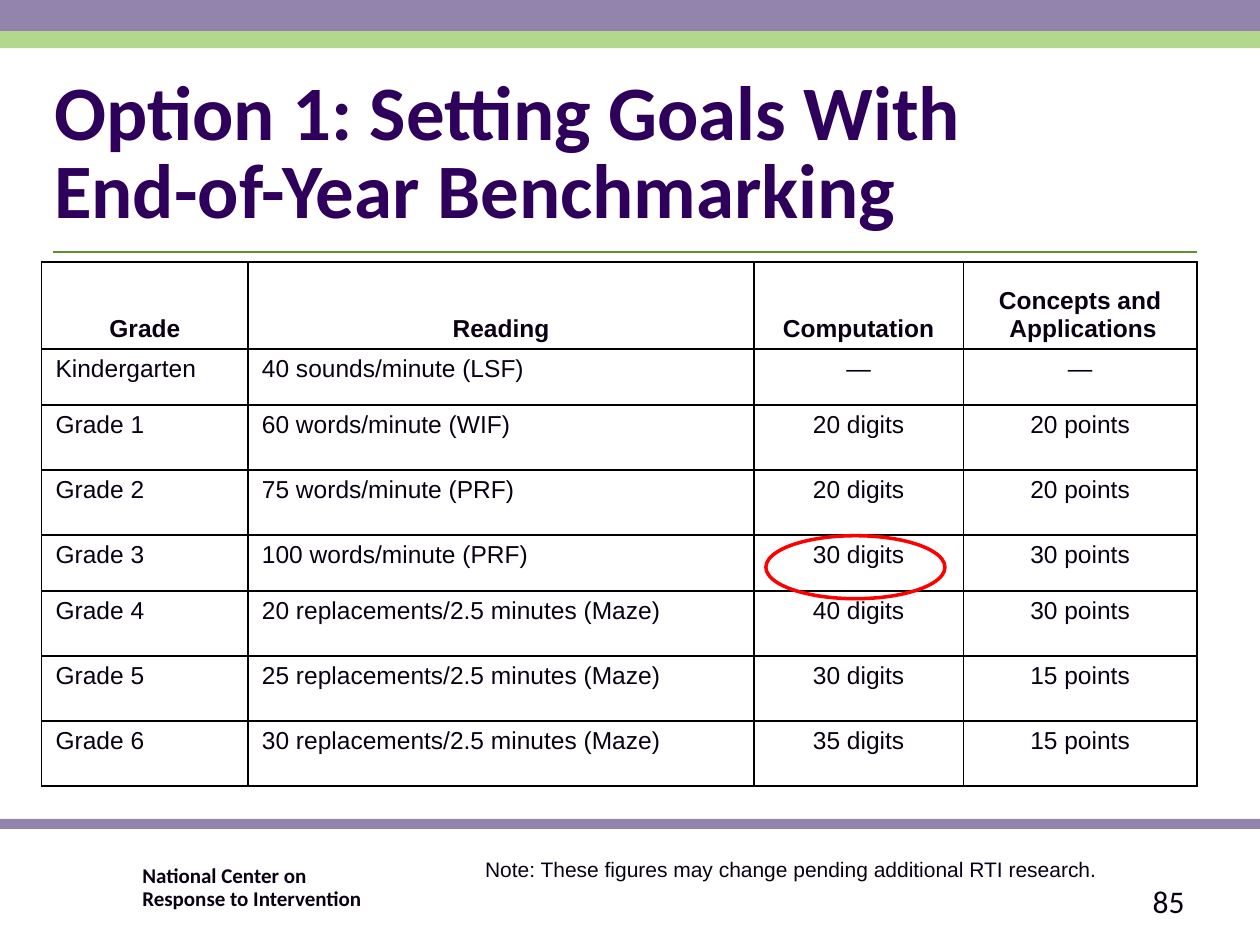
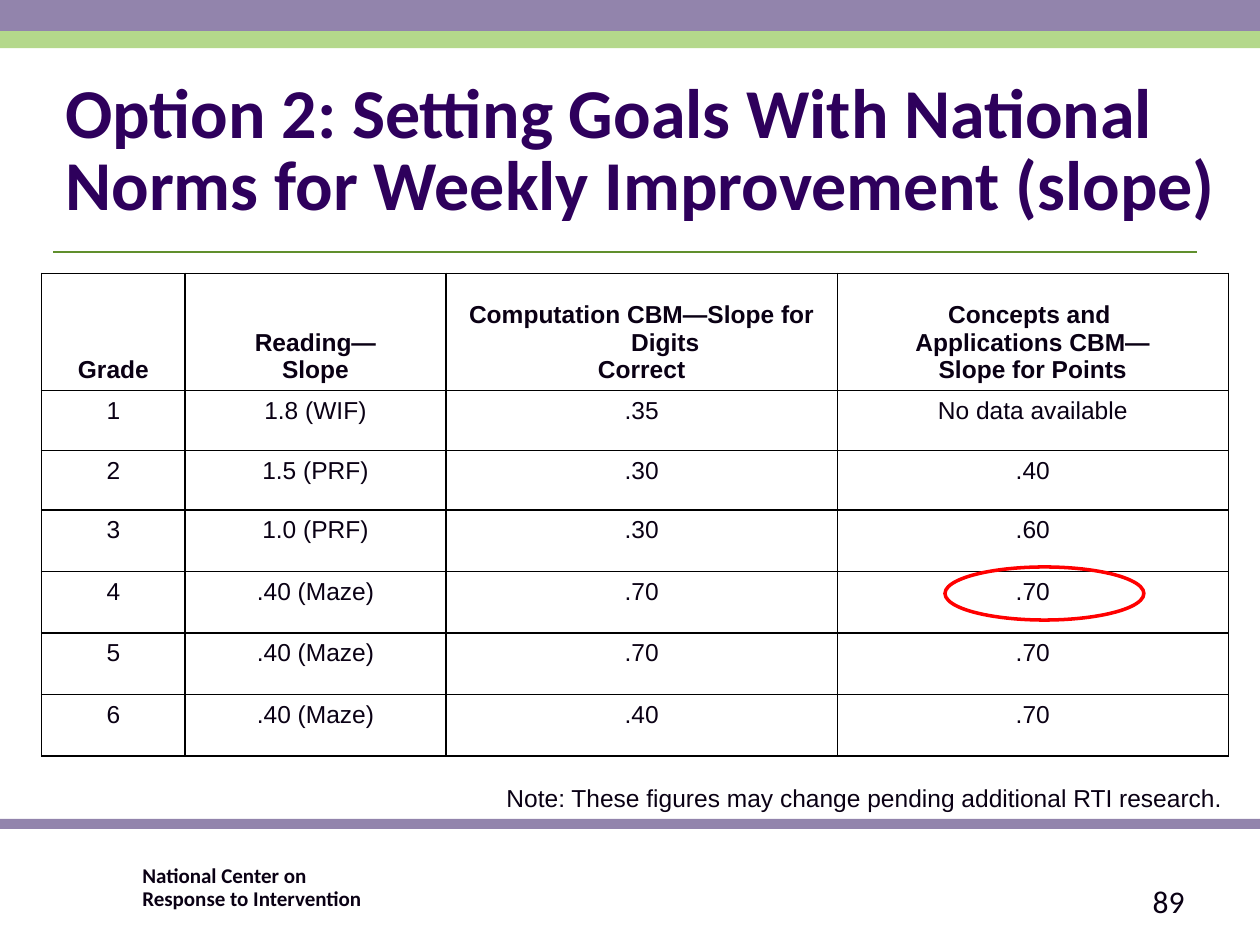
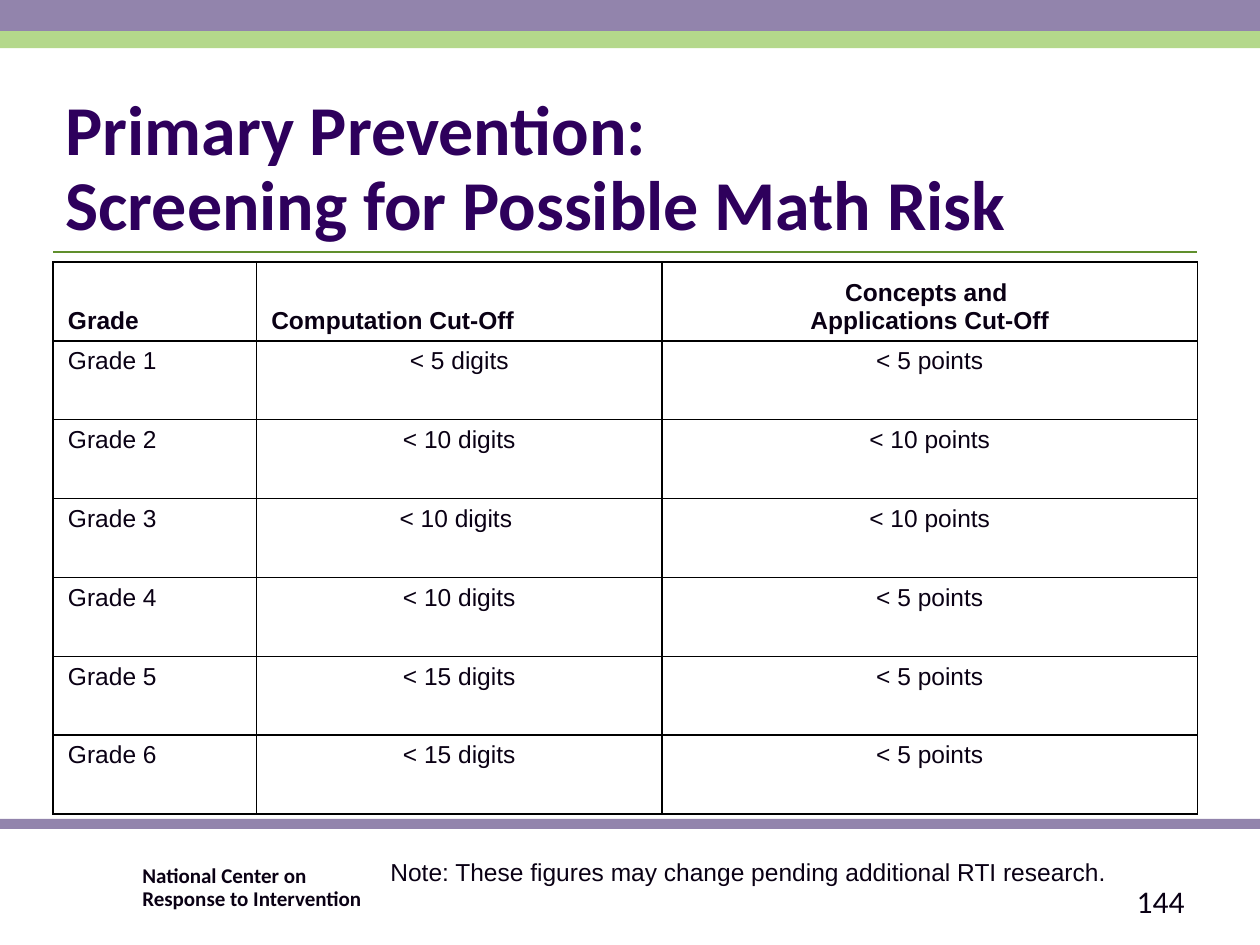
from lxml import etree
from pptx import Presentation, util as u
from pptx.dml import color
from pptx.enum import shapes, text
from pptx.oxml import ns

PURPLE = color.RGBColor(0x92, 0x84, 0xAC)
GREEN = color.RGBColor(0xB4, 0xD8, 0x8B)
RULE_GREEN = color.RGBColor(0x60, 0x8F, 0x2D)
TITLE_PURPLE = color.RGBColor(0x2E, 0x00, 0x5C)
INK = color.RGBColor(0x0A, 0x00, 0x14)
RED = color.RGBColor(0xFF, 0x00, 0x00)
WHITE = color.RGBColor(0xFF, 0xFF, 0xFF)
BLACK = color.RGBColor(0x00, 0x00, 0x00)

LEFT, CENTER, RIGHT = text.PP_ALIGN.LEFT, text.PP_ALIGN.CENTER, text.PP_ALIGN.RIGHT
TOP, MIDDLE, BOTTOM = text.MSO_ANCHOR.TOP, text.MSO_ANCHOR.MIDDLE, text.MSO_ANCHOR.BOTTOM

BANDS = [(16.51, 0.2, PURPLE), (0, 0.63, PURPLE), (0.63, 0.34, GREEN)]
FOOTER = "National Center on \vResponse to Intervention"
NOTE = "Note: These figures may change pending additional RTI research."
HANGING_INDENT = u.Cm(0.95)

BENCHMARKS = [
    ["Grade", "Reading", "Computation", "Concepts and\n Applications"],
    ["Kindergarten", "40 sounds/minute (LSF)", "—", "—"],
    ["Grade 1", "60 words/minute (WIF)", "20 digits", "20 points"],
    ["Grade 2", "75 words/minute (PRF)", "20 digits", "20 points"],
    ["Grade 3", "100 words/minute (PRF)", "30 digits", "30 points"],
    ["Grade 4", "20 replacements/2.5 minutes (Maze)", "40 digits", "30 points"],
    ["Grade 5", "25 replacements/2.5 minutes (Maze)", "30 digits", "15 points"],
    ["Grade 6", "30 replacements/2.5 minutes (Maze)", "35 digits", "15 points"],
]
SLOPES = [
    ["Grade", "Reading—\nSlope", "Computation CBM—Slope for Digits\nCorrect",
     "Concepts and \nApplications CBM—\nSlope for Points"],
    ["1", "1.8 (WIF)", ".35", "No data available"],
    ["2", "1.5 (PRF)", ".30", ".40"],
    ["3", "1.0 (PRF)", ".30", ".60"],
    ["4", ".40 (Maze)", ".70", ".70"],
    ["5", ".40 (Maze)", ".70", ".70"],
    ["6", ".40 (Maze)", ".40", ".70"],
]
CUT_OFFS = [
    ["Grade", "Computation Cut-Off", "Concepts and \vApplications Cut-Off"],
    ["Grade 1", "< 5 digits", "< 5 points"],
    ["Grade 2", "< 10 digits", "< 10 points"],
    ["Grade 3", "< 10 digits ", "< 10 points"],
    ["Grade 4", "< 10 digits", "< 5 points"],
    ["Grade 5", "< 15 digits", "< 5 points"],
    ["Grade 6", "< 15 digits", "< 5 points"],
]


def set_values(target, values):
    """Set attributes of an object from a dict."""
    for name, value in values.items():
        setattr(target, name, value)


def write(frame, words, size, font="Arial", bold=False, ink=INK, **paragraph_values):
    """Fill a text frame and format its paragraphs, runs and line breaks."""
    frame.text = words
    for paragraph in frame.paragraphs:
        set_values(paragraph, paragraph_values)
        for run in paragraph.runs:
            set_values(run.font, {"name": font, "size": u.Pt(size), "bold": bold})
            run.font.color.rgb = ink
        for line_break in paragraph._p.findall(ns.qn("a:br")):
            etree.SubElement(line_break, ns.qn("a:rPr")).set("sz", str(size * 100))


def add_text(slide, box, words, size, anchor=TOP, margin=None, **style):
    """Add a wrapping text box."""
    frame = slide.shapes.add_textbox(*map(u.Cm, box)).text_frame
    set_values(frame, {"word_wrap": True, "vertical_anchor": anchor})
    if margin is not None:
        sides = ("margin_left", "margin_top", "margin_right", "margin_bottom")
        set_values(frame, dict.fromkeys(sides, u.Cm(margin)))
    write(frame, words, size, **style)


def add_band(slide, top, height, fill):
    """Add a full-width coloured band."""
    band = slide.shapes.add_shape(
        shapes.MSO_SHAPE.RECTANGLE, 0, u.Cm(top), u.Cm(25.4), u.Cm(height))
    band.shadow.inherit = False
    band.fill.solid()
    band.fill.fore_color.rgb = fill
    band.line.fill.background()


def add_title_rule(slide):
    """Add the thin line under the title."""
    rule = slide.shapes.add_connector(
        shapes.MSO_CONNECTOR.STRAIGHT, u.Cm(1.07), u.Cm(5.08), u.Cm(24.13), u.Cm(5.08))
    rule.line.color.rgb = RULE_GREEN
    rule.line.width = u.Pt(0.75)
    etree.SubElement(rule._element.spPr, ns.qn("a:effectLst"))


def add_highlight(slide, box):
    """Add a red ring around a table value."""
    ring = slide.shapes.add_shape(shapes.MSO_SHAPE.OVAL, *map(u.Cm, box))
    ring.shadow.inherit = False
    ring.fill.background()
    ring.line.color.rgb = RED
    ring.line.width = u.Pt(2)


def add_borders(cell):
    """Draw a thin black line on every side of a cell."""
    properties = cell._tc.get_or_add_tcPr()
    for side in ("lnL", "lnR", "lnT", "lnB"):
        line = etree.SubElement(properties, ns.qn(f"a:{side}"), w=str(u.Pt(1)))
        fill = etree.SubElement(line, ns.qn("a:solidFill"))
        etree.SubElement(fill, ns.qn("a:srgbClr"), val=str(BLACK))


def format_cell(cell, words, header, align, side_margin, hanging):
    """Write one table cell with its borders, fill and margins."""
    add_borders(cell)
    cell.fill.solid()
    cell.fill.fore_color.rgb = WHITE
    set_values(cell, {
        "vertical_anchor": BOTTOM if header else TOP,
        "margin_left": u.Cm(side_margin), "margin_right": u.Cm(side_margin),
        "margin_top": u.Cm(0.13), "margin_bottom": u.Cm(0.13)})
    write(cell.text_frame, words, 14, bold=header, alignment=align)
    if hanging:
        for paragraph in cell.text_frame.paragraphs:
            properties = paragraph._p.get_or_add_pPr()
            properties.set("marL", str(HANGING_INDENT))
            properties.set("indent", str(-HANGING_INDENT))


def add_grid(slide, left, top, widths, heights, rows, header_aligns, body_aligns,
             side_margin=0.28, hanging=True):
    """Add a bordered table whose first row is the header."""
    table = slide.shapes.add_table(
        len(rows), len(widths), u.Cm(left), u.Cm(top),
        u.Cm(sum(widths)), u.Cm(sum(heights))).table
    set_values(table, {"first_row": False, "horz_banding": False})
    for column, width in zip(table.columns, widths):
        column.width = u.Cm(width)
    for row, height in zip(table.rows, heights):
        row.height = u.Cm(height)
    for r, row in enumerate(rows):
        aligns = body_aligns if r else header_aligns
        for c, (words, align) in enumerate(zip(row, aligns)):
            format_cell(table.cell(r, c), words, r == 0, align, side_margin, hanging)


def add_base_slide(presentation, title, title_box, title_size, number, spacing=0.85):
    """Add a slide with bands, footer, title and slide number."""
    slide = presentation.slides.add_slide(presentation.slide_layouts[6])
    for band in BANDS:
        add_band(slide, *band)
    add_text(slide, (2.77, 17.35, 8.23, 0.76), FOOTER, 12, margin=0.1,
             font="Calibri", bold=True, line_spacing=0.9)
    add_title_rule(slide)
    add_text(slide, title_box, title, title_size, anchor=BOTTOM, font="Calibri",
             bold=True, ink=TITLE_PURPLE, line_spacing=spacing)
    add_text(slide, (18.21, 17.65, 5.92, 1.02), number, 18, anchor=MIDDLE,
             font="Calibri", alignment=RIGHT)
    return slide


def main():
    """Build the three goal and screening slides."""
    presentation = Presentation()
    set_values(presentation, {"slide_width": u.Cm(25.4), "slide_height": u.Cm(19.05)})

    slide = add_base_slide(
        presentation, "Option 1: Setting Goals With \vEnd-of-Year Benchmarking",
        (0.84, 2.11, 23.29, 2.74), 44, "85")
    add_grid(slide, 0.84, 5.28, [4.16, 10.2, 4.22, 4.71],
             [1.76, 1.13, 1.31, 1.31, 1.13, 1.31, 1.31, 1.31], BENCHMARKS,
             [CENTER] * 4, [LEFT, LEFT, CENTER, CENTER])
    add_text(slide, (9.53, 17.15, 13.97, 0.76), NOTE, 12)
    add_highlight(slide, (15.44, 10.8, 3.61, 1.27))

    slide = add_base_slide(
        presentation,
        "Option 2: Setting Goals With National Norms for Weekly Improvement (slope)",
        (1.07, 1.91, 23.93, 2.74), 40, "89")
    add_grid(slide, 0.84, 5.51, [2.89, 5.26, 7.89, 7.88],
             [2.36, 1.21, 1.2] + [1.24] * 4, SLOPES, [CENTER] * 4, [CENTER] * 4)
    add_text(slide, (9.96, 15.67, 15.44, 0.84), NOTE, 14)
    add_highlight(slide, (19.05, 11.43, 4.01, 1.07))

    slide = add_base_slide(
        presentation, "Primary Prevention:\vScreening for Possible Math Risk",
        (1.07, 2.34, 23.06, 2.74), 40, "144", spacing=0.9)
    add_grid(slide, 1.07, 5.28, [4.1, 8.18, 10.79], [1.59] * 7, CUT_OFFS,
             [LEFT, LEFT, CENTER], [LEFT, CENTER, CENTER],
             side_margin=0.3, hanging=False)
    add_text(slide, (7.62, 17.15, 16.31, 0.84), NOTE, 14)

    presentation.save("out.pptx")


if __name__ == "__main__":
    main()
